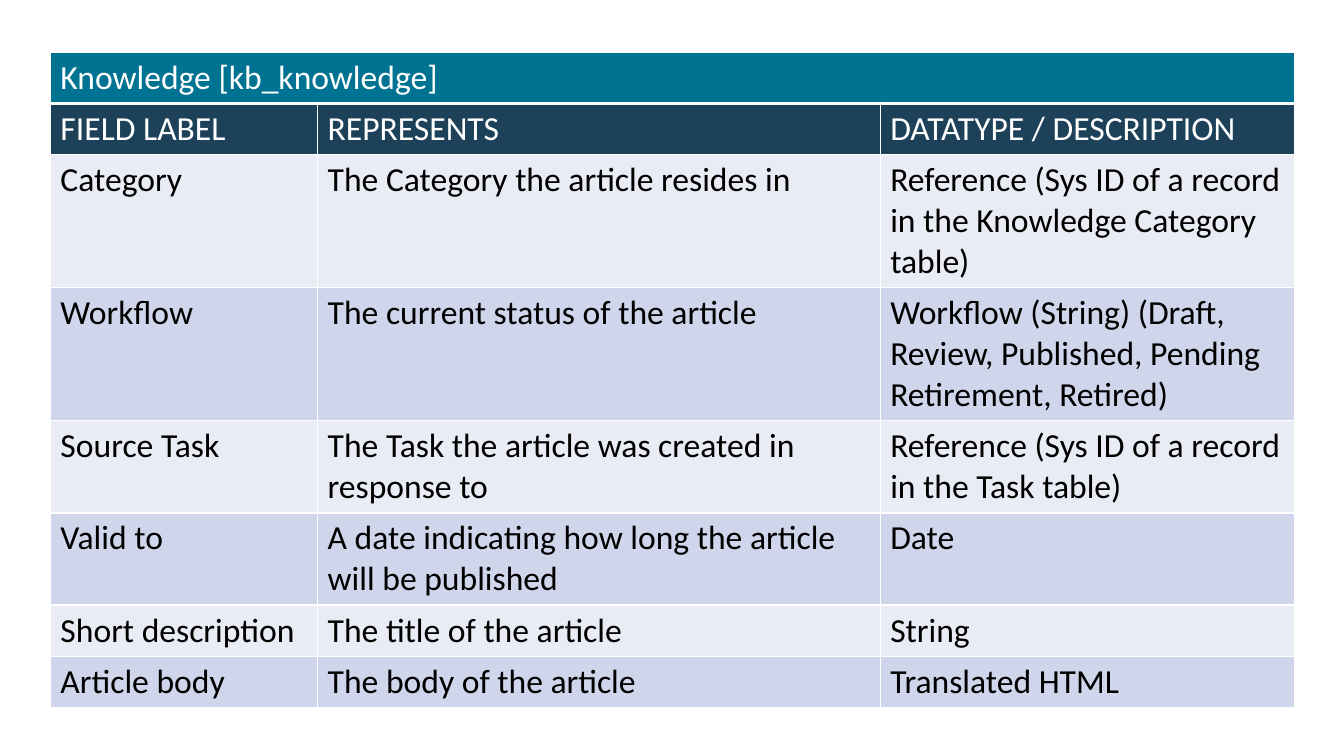
from lxml import etree
from pptx import Presentation
from pptx import util as u
from pptx.dml.color import RGBColor
from pptx.oxml import ns

COLORS = {
    "title": "007393",
    "header": "1C4159",
    "odd": "E9EBF5",
    "even": "CFD5EA",
    "light": "FFFFFF",
    "dark": "000000",
}
FONT = {"name": "Calibri", "size": u.Pt(24), "bold": False}
TITLE = "Knowledge [kb_knowledge]"
HEADERS = ("FIELD LABEL", "REPRESENTS", "DATATYPE / DESCRIPTION")
FIELDS = [
    ("Category", "The Category the article resides in",
     "Reference (Sys ID of a record in the Knowledge Category table)"),
    ("Workflow", "The current status of the article",
     "Workflow (String) (Draft, Review, Published, Pending Retirement, Retired)"),
    ("Source Task", "The Task the article was created in response to",
     "Reference (Sys ID of a record in the Task table)"),
    ("Valid to", "A date indicating how long the article will be published", "Date"),
    ("Short description", "The title of the article", "String"),
    ("Article body", "The body of the article", "Translated HTML"),
]
COL_WIDTHS = (2.65, 5.58, 4.11)
ROW_HEIGHT = 0.46


class SlideBuilder:
    def __init__(self, slide, colors, font):
        self.slide = slide
        self.colors = colors
        self.font = font

    def borders(self, cell, bottom):
        """Draw 1 pt light borders, with the bottom one `bottom` points wide."""
        tc_pr = cell._tc.get_or_add_tcPr()
        for side, width in (("L", 1), ("R", 1), ("T", 1), ("B", bottom)):
            ln = etree.SubElement(tc_pr, ns.qn(f"a:ln{side}"), w=str(u.Pt(width)))
            fill = etree.SubElement(ln, ns.qn("a:solidFill"))
            etree.SubElement(fill, ns.qn("a:srgbClr"), val=self.colors["light"])

    def cell(self, cell, words, fill, color, bottom=1):
        self.borders(cell, bottom)
        cell.fill.solid()
        cell.fill.fore_color.rgb = RGBColor.from_string(self.colors[fill])
        p = cell.text_frame.paragraphs[0]
        r = p.add_run()
        r.text = words
        for key, value in self.font.items():
            setattr(r.font, key, value)
        r.font.color.rgb = RGBColor.from_string(self.colors[color])

    def table(self, left, top, title, headers, rows):
        n_rows = len(rows) + 2
        frame = self.slide.shapes.add_table(
            n_rows, len(headers), u.Inches(left), u.Inches(top),
            u.Inches(sum(COL_WIDTHS)), u.Inches(n_rows * ROW_HEIGHT))
        table = frame.table
        for column, width in zip(table.columns, COL_WIDTHS):
            column.width = u.Inches(width)
        for row in table.rows:
            row.height = u.Inches(ROW_HEIGHT)

        table.cell(0, 0).merge(table.cell(0, len(headers) - 1))
        self.cell(table.cell(0, 0), title, "title", "light", bottom=3)
        for i, values in enumerate([headers, *rows]):
            fill = ("even", "odd")[i % 2] if i else "header"
            color = "dark" if i else "light"
            for j, words in enumerate(values):
                self.cell(table.cell(i + 1, j), words, fill, color)


def main():
    prs = Presentation()
    prs.slide_width, prs.slide_height = u.Inches(13.33), u.Inches(7.5)
    s = prs.slides.add_slide(prs.slide_layouts[6])
    SlideBuilder(s, COLORS, FONT).table(0.5, 0.52, TITLE, HEADERS, FIELDS)
    prs.save("out.pptx")


if __name__ == "__main__":
    main()
